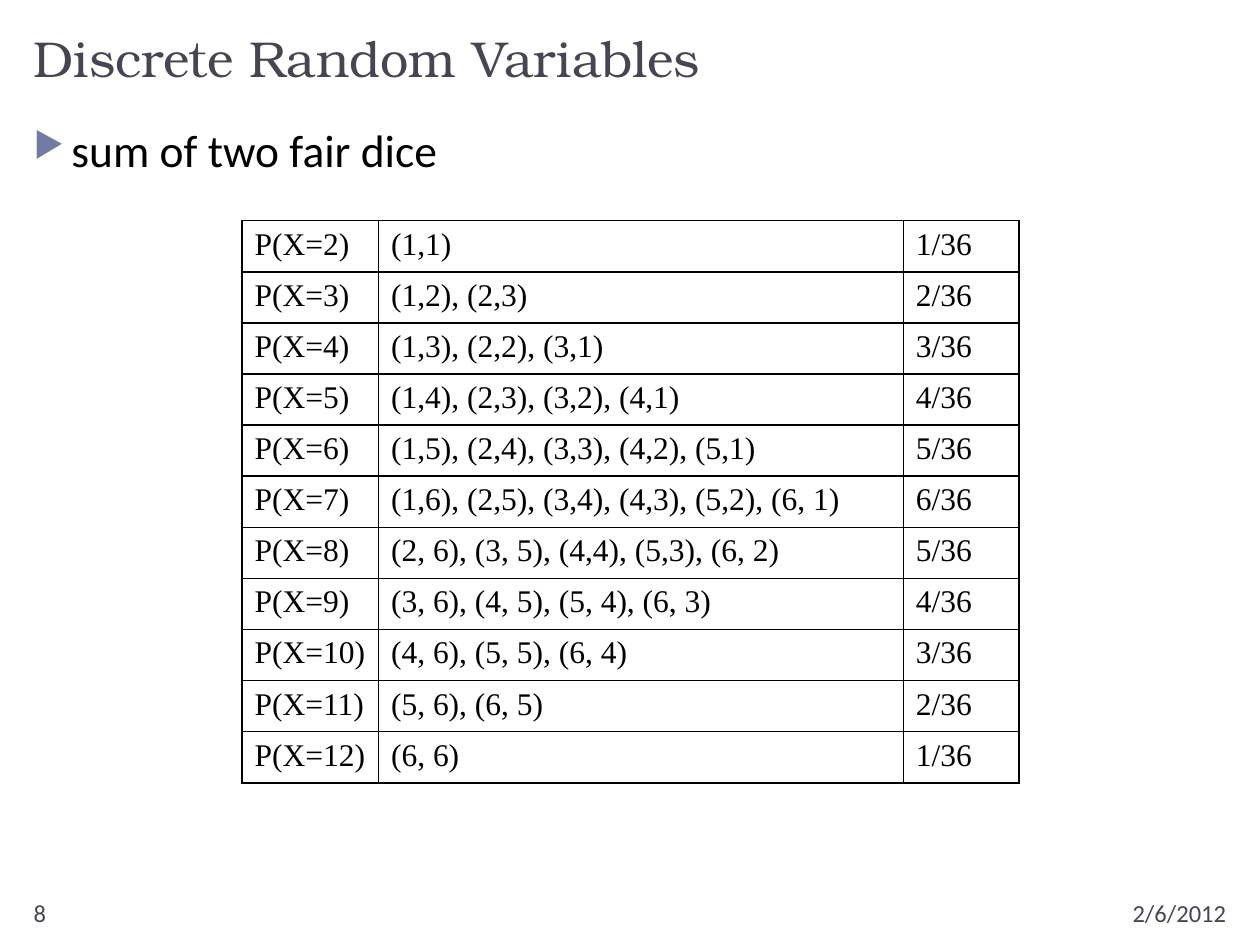
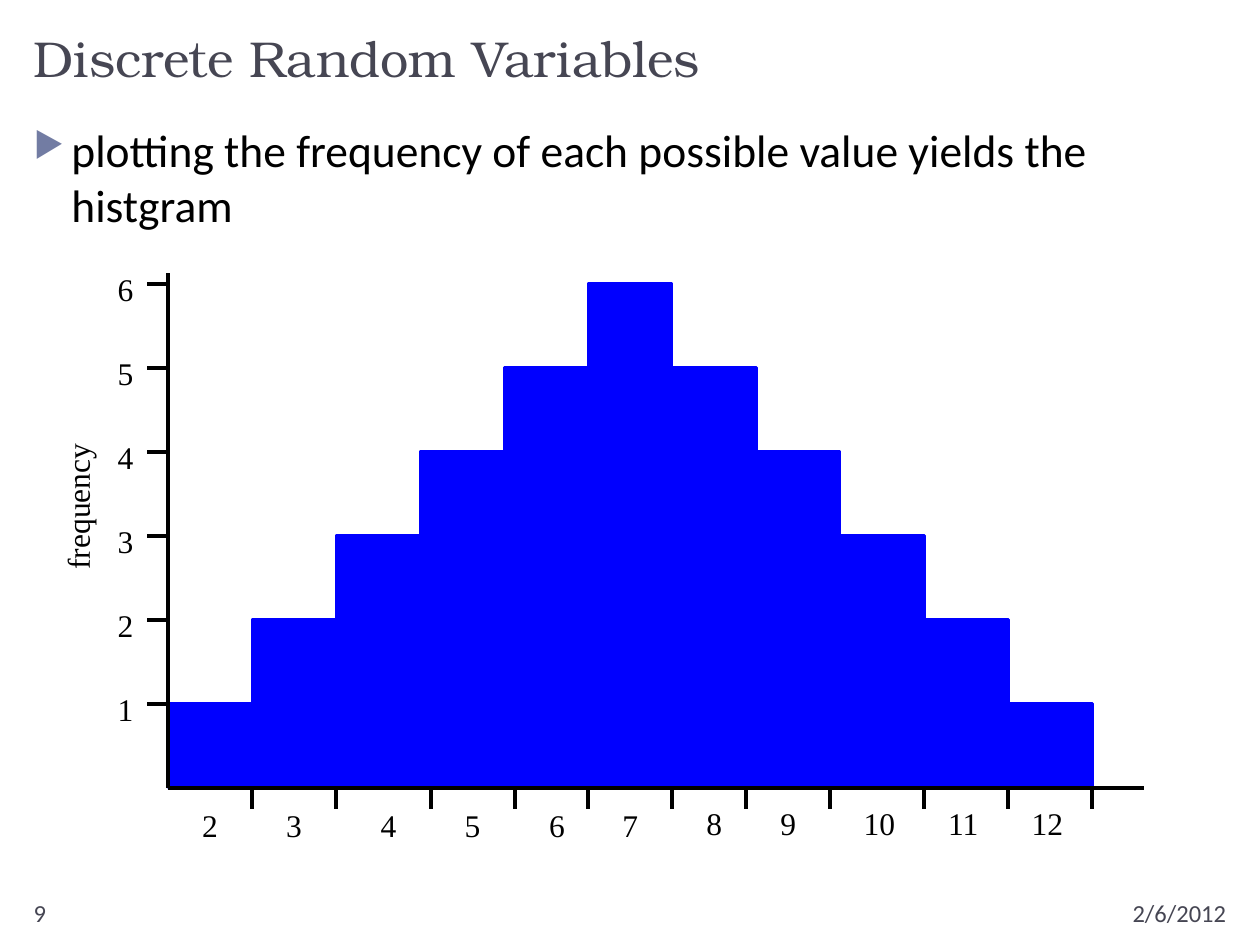
from dataclasses import dataclass
from typing import NamedTuple

from lxml import etree
from pptx import Presentation
from pptx.dml.color import RGBColor
from pptx.enum.shapes import MSO_CONNECTOR, MSO_SHAPE
from pptx.enum.text import MSO_ANCHOR, PP_ALIGN
from pptx.oxml.ns import qn
from pptx.util import Cm, Pt

LEFT, CENTER, RIGHT = PP_ALIGN.LEFT, PP_ALIGN.CENTER, PP_ALIGN.RIGHT
TOP, BOTTOM = MSO_ANCHOR.TOP, MSO_ANCHOR.BOTTOM
STRAIGHT, RECTANGLE = MSO_CONNECTOR.STRAIGHT, MSO_SHAPE.RECTANGLE
BLANK_LAYOUT = 6


@dataclass(frozen=True)
class Style:
    """Type face, size and colour of a kind of text."""
    font: str
    size: float
    color: str

    def apply(self, span):
        """Set the style on a run."""
        for name, value in {"name": self.font, "size": Pt(self.size)}.items():
            setattr(span.font, name, value)
        span.font.color.rgb = RGBColor.from_string(self.color)


@dataclass(frozen=True)
class Theme:
    """Colours, type styles and line widths shared by the deck."""
    ink: str = "000000"
    bar: str = "0000FF"
    bullet: str = "727CA3"
    axis_width: float = 2.25
    bar_line_width: float = 1.5
    border_width: float = 1
    title: Style = Style("TeX Gyre Bonum", 28.8, "464653")
    body: Style = Style("Calibri", 26, "000000")
    footer: Style = Style("Calibri", 14, "464653")
    figure: Style = Style("Times New Roman", 18, "000000")


class Box(NamedTuple):
    """A rectangle measured in centimetres."""
    left: float
    top: float
    width: float
    height: float

    def lengths(self):
        """Return the four measures as slide lengths."""
        return [Cm(value) for value in self]


class Bar(NamedTuple):
    """One histogram bar with the shifts of its tick and label."""
    total: int
    frequency: int
    tick_shift: float = 0
    label_shift: float = 0


THEME = Theme()
PAGE = Box(0, 0, 25.4, 19.05)
TITLE = "Discrete Random Variables"
DATE = "2/6/2012"
TABLE_BOX = Box(4.88, 4.45, 15.66, 11.33)
TABLE_COLUMNS = (2.75, 10.58, 2.33)
HISTOGRAM_BOX = Box(3.39, 5.72, 18.63, 10.16)

OUTCOMES = (
    "(1,1)",
    "(1,2), (2,3)",
    "(1,3), (2,2), (3,1)",
    "(1,4), (2,3), (3,2), (4,1)",
    "(1,5), (2,4), (3,3), (4,2), (5,1)",
    "(1,6), (2,5), (3,4), (4,3), (5,2), (6, 1)",
    "(2, 6), (3, 5), (4,4), (5,3), (6, 2)",
    "(3, 6), (4, 5), (5, 4), (6, 3)",
    "(4, 6), (5, 5), (6, 4)",
    "(5, 6), (6, 5)",
    "(6, 6)",
)

BARS = (
    Bar(2, 1),
    Bar(3, 2),
    Bar(4, 3, 0.21, 0.21),
    Bar(5, 4, 0.21, 0.21),
    Bar(6, 5, 0, 0.22),
    Bar(7, 6),
    Bar(8, 5, -0.21),
    Bar(9, 4, -0.21, -0.2),
    Bar(10, 3, 0, -0.06),
    Bar(11, 2, 0, -0.06),
    Bar(12, 1, 0, -0.06),
)


def add_text(page, box, text, style, align=LEFT, anchor=TOP, wrap=True):
    """Add a one-paragraph text box and return it."""
    shape = page.shapes.add_textbox(*box.lengths())
    frame = shape.text_frame
    for name, value in {"word_wrap": wrap, "vertical_anchor": anchor}.items():
        setattr(frame, name, value)
    para = frame.paragraphs[0]
    para.alignment = align
    span = para.add_run()
    span.text = text
    style.apply(span)
    return shape


def add_line(page, start, end):
    """Draw a black axis line between two points."""
    points = [Cm(value) for value in (*start, *end)]
    line = page.shapes.add_connector(STRAIGHT, *points)
    line.line.width = Pt(THEME.axis_width)
    line.line.color.rgb = RGBColor.from_string(THEME.ink)
    etree.SubElement(line._element.spPr, qn("a:effectLst"))


def add_bullet(para):
    """Give a paragraph a coloured triangle and a hanging indent."""
    para.space_before = Pt(6)
    properties = para._p.get_or_add_pPr()
    for name, value in {"marL": Cm(0.76), "indent": Cm(-0.76)}.items():
        properties.set(name, str(int(value)))
    color = etree.SubElement(properties, qn("a:buClr"))
    etree.SubElement(color, qn("a:srgbClr"), val=THEME.bullet)
    etree.SubElement(properties, qn("a:buSzPct"), val="76000")
    etree.SubElement(properties, qn("a:buChar"), char="▶")


def add_frame(page, box, number, statement):
    """Place the title, bulleted statement, page number and date."""
    margin = 0.43
    width = box.width - 2 * margin
    left = box.left + margin
    footer_top = box.top + 17.98
    add_text(page, Box(left, box.top + margin, width, 1.47), TITLE, THEME.title, anchor=BOTTOM)
    body = add_text(page, Box(left, box.top + 2.34, width, 15.24), statement, THEME.body)
    add_bullet(body.text_frame.paragraphs[0])
    add_text(page, Box(left, footer_top, 5.5, 0.69), str(number), THEME.footer)
    add_text(page, Box(left + width - 4.65, footer_top, 4.65, 0.69), DATE, THEME.footer, RIGHT)


def add_borders(cell):
    """Draw a thin line on the four sides of a table cell."""
    properties = cell._tc.get_or_add_tcPr()
    for side in ("lnL", "lnR", "lnT", "lnB"):
        line = etree.SubElement(properties, qn(f"a:{side}"), w=str(int(Pt(THEME.border_width))))
        fill = etree.SubElement(line, qn("a:solidFill"))
        etree.SubElement(fill, qn("a:srgbClr"), val=THEME.ink)


def add_probability_table(page, box):
    """List each sum with its outcomes and probability."""
    table = page.shapes.add_table(len(BARS), len(TABLE_COLUMNS), *box.lengths()).table
    for name in ("first_row", "horz_banding"):
        setattr(table, name, False)
    for column, width in zip(table.columns, TABLE_COLUMNS):
        column.width = Cm(width)
    for row, bar, outcomes in zip(table.rows, BARS, OUTCOMES):
        row.height = Cm(box.height / len(BARS))
        texts = (f"P(X={bar.total})", outcomes, f"{bar.frequency}/36")
        for cell, text in zip(row.cells, texts):
            span = cell.text_frame.paragraphs[0].add_run()
            span.text = text
            THEME.figure.apply(span)
            add_borders(cell)
            cell.fill.background()


def add_bars(page, box, step, unit):
    """Draw the touching bars, standing on the bottom of the box."""
    for index, bar in enumerate(BARS):
        height = bar.frequency * unit
        place = Box(box.left + index * step, box.top + box.height - height, step, height)
        shape = page.shapes.add_shape(RECTANGLE, *place.lengths())
        shape.shadow.inherit = False
        shape.fill.solid()
        shape.line.width = Pt(THEME.bar_line_width)
        for color in (shape.fill.fore_color, shape.line.color):
            color.rgb = RGBColor.from_string(THEME.bar)


def add_frequency_axis(page, box, unit, tick):
    """Draw the vertical axis with its ticks, numbers and caption."""
    base = box.top + box.height
    add_line(page, (box.left, base), (box.left, box.top - 0.21))
    for value in range(1, max(bar.frequency for bar in BARS) + 1):
        level = base - value * unit
        add_line(page, (box.left - tick, level), (box.left, level))
        label = Box(box.left - 1.28, level - 0.41, 0.84, 1.02)
        add_text(page, label, str(value), THEME.figure, CENTER, wrap=False)
    caption_box = Box(box.left - 3.36, box.top + 3.98, 3.07, 1.02)
    caption = add_text(page, caption_box, "frequency", THEME.figure, CENTER, wrap=False)
    caption.rotation = 270


def add_total_axis(page, box, step, tick):
    """Draw the horizontal axis with its ticks and sums."""
    base = box.top + box.height
    add_line(page, (box.left, base), (box.left + box.width + 1.05, base))
    for index, bar in enumerate(BARS):
        end = box.left + (index + 1) * step + bar.tick_shift
        add_line(page, (end, base), (end, base + tick))
        width = 0.84 if bar.total < 10 else 1.14
        middle = box.left + (index + 0.5) * step + bar.label_shift
        drop = 0.25 if bar.total < 8 else 0.2
        label = Box(middle - width / 2, base + drop, width, 1.02)
        add_text(page, label, str(bar.total), THEME.figure, CENTER, wrap=False)


def add_histogram(page, box):
    """Plot how often each sum occurs."""
    step = box.width / len(BARS)
    unit = box.height / max(bar.frequency for bar in BARS)
    tick = 0.42
    add_bars(page, box, step, unit)
    add_frequency_axis(page, box, unit, tick)
    add_total_axis(page, box, step, tick)


def main():
    """Build and save the deck."""
    deck = Presentation()
    deck.slide_width, deck.slide_height = Cm(PAGE.width), Cm(PAGE.height)
    contents = (
        ("sum of two fair dice", add_probability_table, TABLE_BOX),
        ("plotting the frequency of each possible value yields the histgram",
         add_histogram, HISTOGRAM_BOX),
    )
    for number, (statement, add_figure, box) in enumerate(contents, start=8):
        page = deck.slides.add_slide(deck.slide_layouts[BLANK_LAYOUT])
        add_frame(page, PAGE, number, statement)
        add_figure(page, box)
    deck.save("out.pptx")


if __name__ == "__main__":
    main()
